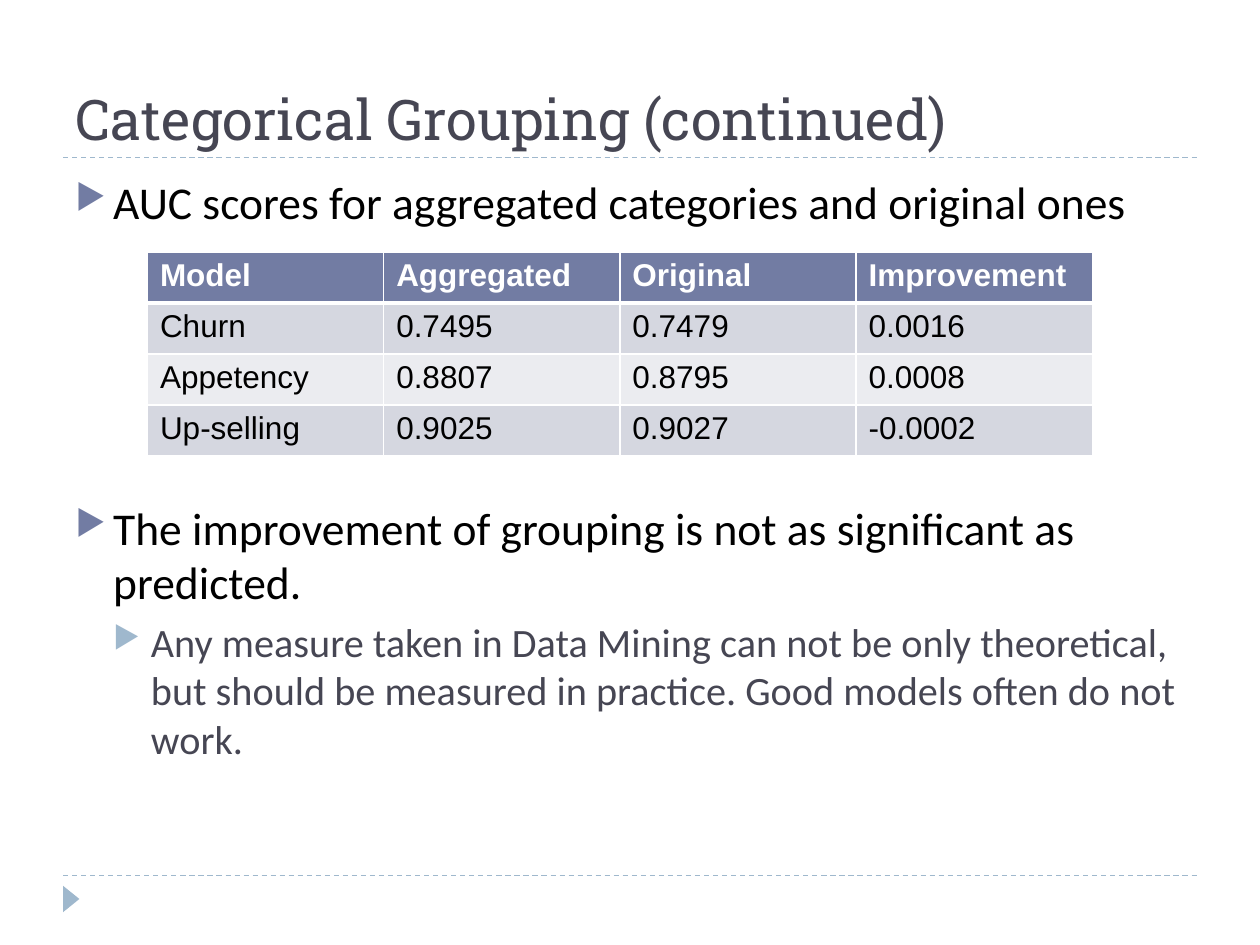
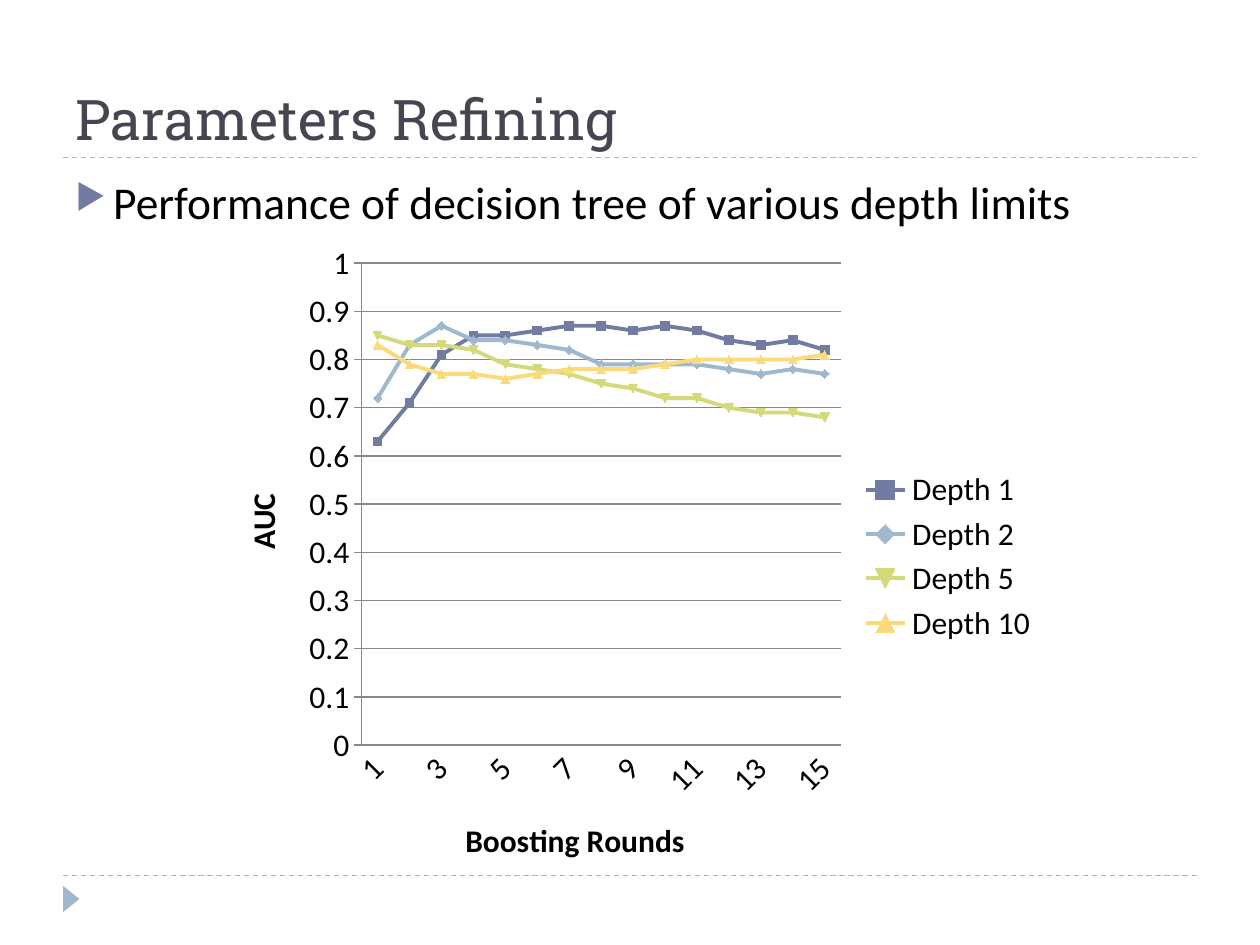
import dataclasses

import lxml.etree
import pptx
import pptx.chart.data
import pptx.dml.color
import pptx.enum.chart
import pptx.enum.dml
import pptx.enum.shapes
import pptx.enum.text
import pptx.oxml
import pptx.oxml.ns
import pptx.util

Inches = pptx.util.Inches
Pt = pptx.util.Pt
qn = pptx.oxml.ns.qn


@dataclasses.dataclass(frozen=True)
class Theme:
    ink: str = "000000"
    heading: str = "464653"
    accent: str = "727CA3"
    light_accent: str = "9FB8CD"
    white: str = "FFFFFF"
    grid: str = "868686"
    bands: tuple = ("D5D7E0", "EBECF0")
    series: tuple = ("727CA3", "9FB8CD", "D2DA7A", "FADA7A")
    title_font: str = "Roboto Slab"
    body_font: str = "Calibri"
    table_font: str = "Arial"
    title_size: int = 32
    body_sizes: tuple = (26, 23)
    small_size: int = 18


THEME = Theme()

SCORES = [
    ["Model", "Aggregated", "Original", "Improvement"],
    ["Churn", "0.7495", "0.7479", "0.0016"],
    ["Appetency", "0.8807", "0.8795", "0.0008"],
    ["Up-selling", "0.9025", "0.9027", "-0.0002"],
]

AUC_BY_DEPTH = {
    "Depth 1": [0.63, 0.71, 0.81, 0.85, 0.85, 0.86, 0.87, 0.87,
                0.86, 0.87, 0.86, 0.84, 0.83, 0.84, 0.82],
    "Depth 2": [0.72, 0.83, 0.87, 0.84, 0.84, 0.83, 0.82, 0.79,
                0.79, 0.79, 0.79, 0.78, 0.77, 0.78, 0.77],
    "Depth 5": [0.85, 0.83, 0.83, 0.82, 0.79, 0.78, 0.77, 0.75,
                0.74, 0.72, 0.72, 0.7, 0.69, 0.69, 0.68],
    "Depth 10": [0.83, 0.79, 0.77, 0.77, 0.76, 0.77, 0.78, 0.78,
                 0.78, 0.79, 0.8, 0.8, 0.8, 0.8, 0.81],
}


def rgb(code):
    return pptx.dml.color.RGBColor.from_string(code)


def child(parent, tag, **attributes):
    return lxml.etree.SubElement(parent, qn(tag), **attributes)


def set_font(font, name, size, color, bold=False):
    font.name = name
    font.size = Pt(size)
    font.bold = bold
    font.color.rgb = rgb(color)


# Shared frame: rules, corner marker and title
def add_rule(page, top):
    rule = page.shapes.add_connector(
        pptx.enum.shapes.MSO_CONNECTOR.STRAIGHT,
        Inches(0.5), Inches(top), Inches(9.5), Inches(top))
    rule.line.color.rgb = rgb(THEME.light_accent)
    rule.line.width = Pt(0.75)
    rule.line.dash_style = pptx.enum.dml.MSO_LINE.DASH
    child(rule._element.spPr, "a:effectLst")


def add_corner_marker(page):
    marker = page.shapes.add_shape(
        pptx.enum.shapes.MSO_SHAPE.ISOSCELES_TRIANGLE,
        Inches(0.46), Inches(7.07), Inches(0.21), Inches(0.13))
    marker.rotation = 90
    marker.shadow.inherit = False
    marker.fill.solid()
    marker.fill.fore_color.rgb = rgb(THEME.light_accent)
    marker.line.fill.background()


def add_text_frame(page, top, height):
    box = page.shapes.add_textbox(
        Inches(0.5), Inches(top), Inches(9), Inches(height))
    box.text_frame.word_wrap = True
    return box.text_frame


def add_page(deck, title):
    page = deck.slides.add_slide(deck.slide_layouts[6])
    for top in (6.95, 1.25):
        add_rule(page, top)
    add_corner_marker(page)
    frame = add_text_frame(page, 0.17, 1.08)
    frame.vertical_anchor = pptx.enum.text.MSO_ANCHOR.BOTTOM
    para = frame.paragraphs[0]
    para.text = title
    set_font(para.font, THEME.title_font, THEME.title_size, THEME.heading)
    return page


# Bulleted body: each item is (level, space before, text)
def add_bullets(page, items):
    frame = add_text_frame(page, 1.33, 5.4)
    bullet_colors = (THEME.accent, THEME.light_accent)
    text_colors = (THEME.ink, THEME.heading)
    for index, (level, space, text) in enumerate(items):
        para = frame.add_paragraph() if index else frame.paragraphs[0]
        para.text = text
        para.level = level
        properties = para._p.get_or_add_pPr()
        properties.set("marL", str(Inches(0.3 * (level + 1))))
        properties.set("indent", str(Inches(-0.3)))
        color = child(properties, "a:buClr")
        child(color, "a:srgbClr", val=bullet_colors[level])
        child(properties, "a:buSzPct", val="76000")
        child(properties, "a:buChar", char="▶")
        para.space_before = Pt(space)
        set_font(para.font, THEME.body_font, THEME.body_sizes[level],
                 text_colors[level])


# Score table
def set_borders(cell, top_width, bottom_width):
    properties = cell._tc.get_or_add_tcPr()
    widths = {"L": 1, "R": 1, "T": top_width, "B": bottom_width}
    for side, width in widths.items():
        line = child(properties, "a:ln" + side, w=str(Pt(width)))
        child(child(line, "a:solidFill"), "a:srgbClr", val=THEME.white)


def add_score_table(page, rows):
    frame = page.shapes.add_table(
        len(rows), len(rows[0]),
        Inches(1.17), Inches(2), Inches(7.5), Inches(1.62))
    table = frame.table
    table.horz_banding = False
    for row_index, row in enumerate(rows):
        header = row_index == 0
        fill = THEME.accent if header else THEME.bands[(row_index - 1) % 2]
        for column_index, text in enumerate(row):
            cell = table.cell(row_index, column_index)
            set_borders(cell, 3 if row_index == 1 else 1, 3 if header else 1)
            cell.fill.solid()
            cell.fill.fore_color.rgb = rgb(fill)
            cell.text = text
            set_font(cell.text_frame.paragraphs[0].font, THEME.table_font,
                     THEME.small_size, THEME.white if header else THEME.ink,
                     header)


# AUC line chart
def set_plot_layout(chart, **fractions):
    area = chart._chartSpace.chart.plotArea
    for old in area.findall(qn("c:layout")):
        area.remove(old)
    layout = lxml.etree.Element(qn("c:layout"))
    area.insert(0, layout)
    manual = child(layout, "c:manualLayout")
    child(manual, "c:layoutTarget", val="inner")
    for edge in ("x", "y"):
        child(manual, f"c:{edge}Mode", val="edge")
    for key, value in fractions.items():
        child(manual, f"c:{key}", val=str(value))


def style_axis(axis, title):
    axis.has_title = True
    para = axis.axis_title.text_frame.paragraphs[0]
    para.text = title
    set_font(para.font, THEME.body_font, THEME.small_size, THEME.ink, True)
    axis.format.line.color.rgb = rgb(THEME.grid)
    axis.format.line.width = Pt(0.75)


def add_auc_chart(page, curves):
    data = pptx.chart.data.CategoryChartData()
    data.categories = [str(number) for number in range(1, 16)]
    for name, values in curves.items():
        data.add_series(name, values)
    chart = page.shapes.add_chart(
        pptx.enum.chart.XL_CHART_TYPE.LINE_MARKERS,
        Inches(1.67), Inches(1.83), Inches(6.67), Inches(5.17), data).chart
    set_font(chart.font, THEME.body_font, THEME.small_size, THEME.ink)
    chart.has_title = False
    chart.has_legend = True
    chart.legend.position = pptx.enum.chart.XL_LEGEND_POSITION.RIGHT
    chart.legend.include_in_layout = False
    set_plot_layout(chart, x=0.18, y=0.05, w=0.57, h=0.74)

    rounds, scores = chart.category_axis, chart.value_axis
    style_axis(rounds, "Boosting Rounds")
    rounds.major_tick_mark = pptx.enum.chart.XL_TICK_MARK.NONE
    set_font(rounds.tick_labels.font, THEME.body_font, THEME.small_size,
             THEME.ink)
    label_body = rounds._element.find(qn("c:txPr")).find(qn("a:bodyPr"))
    label_body.set("rot", str(-45 * 60000))
    style_axis(scores, "AUC")
    scores.minimum_scale, scores.maximum_scale = 0, 1
    scores.major_unit = 0.1
    scores.major_tick_mark = pptx.enum.chart.XL_TICK_MARK.CROSS
    scores.has_major_gridlines = True
    scores.major_gridlines.format.line.color.rgb = rgb(THEME.grid)
    scores.major_gridlines.format.line.width = Pt(0.75)

    plot = chart.plots[0]
    plot.vary_by_categories = False
    for curve, color in zip(plot.series, THEME.series):
        curve.smooth = False
        curve.format.line.color.rgb = rgb(color)
        curve.format.line.width = Pt(2.25)
        curve.marker.format.fill.solid()
        curve.marker.format.fill.fore_color.rgb = rgb(color)
        curve.marker.format.line.color.rgb = rgb(color)


def main():
    deck = pptx.Presentation()
    deck.slide_width, deck.slide_height = Inches(10), Inches(7.5)

    # Grouping results; the second bullet clears the table
    page = add_page(deck, "Categorical Grouping (continued)")
    add_bullets(page, [
        (0, 6, "AUC scores for aggregated categories and original ones"),
        (0, 155, "The improvement of grouping is not as significant as "
                 "predicted."),
        (1, 5, "Any measure taken in Data Mining can not be only theoretical, "
               "but should be measured in practice. Good models often do not "
               "work."),
    ])
    add_score_table(page, SCORES)

    # Tree depth comparison
    page = add_page(deck, "Parameters Refining")
    add_bullets(page, [
        (0, 6, "Performance of decision tree of various depth limits"),
    ])
    add_auc_chart(page, AUC_BY_DEPTH)

    deck.save("out.pptx")


if __name__ == "__main__":
    main()
